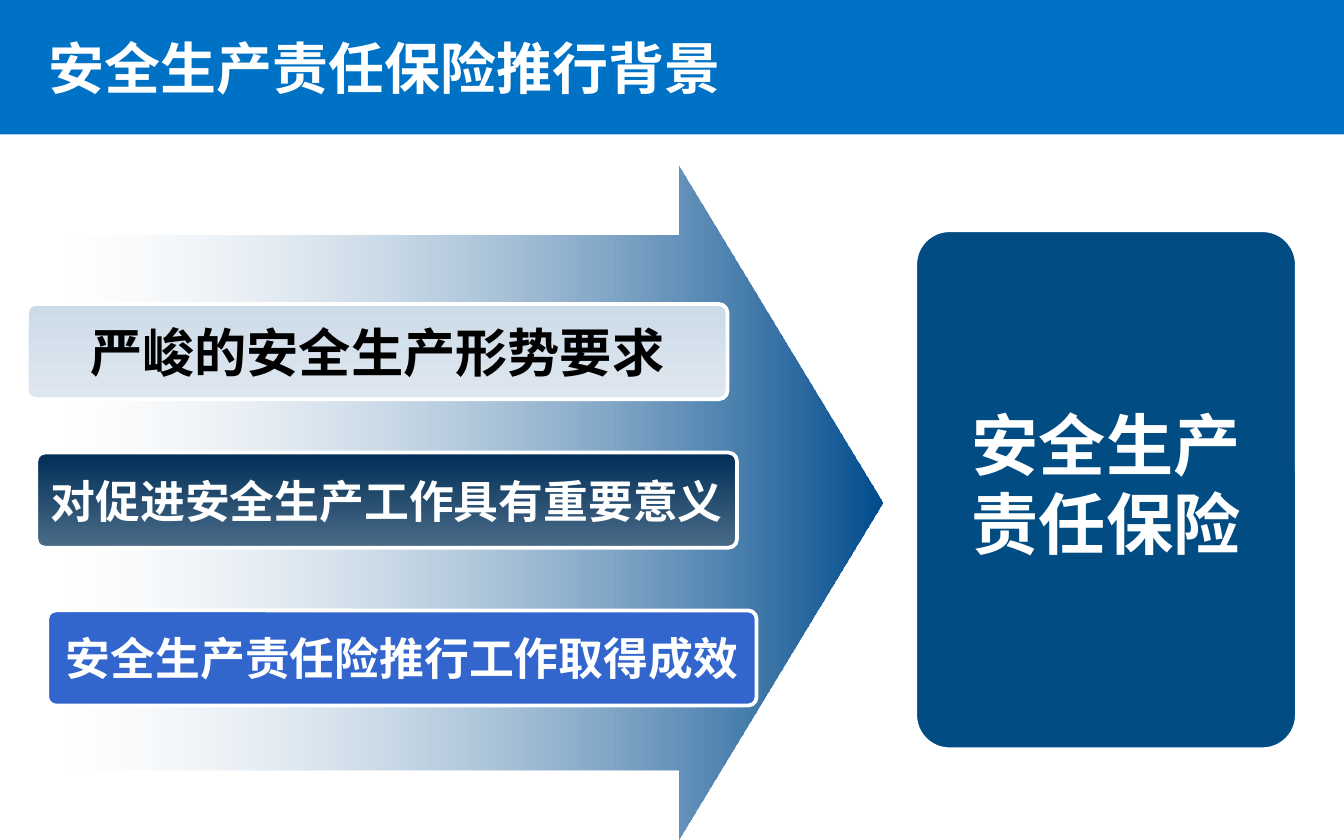
import collections

import pptx
import pptx.dml.color
import pptx.enum.shapes
import pptx.enum.text
import pptx.oxml
import pptx.oxml.ns
import pptx.util

RGBColor = pptx.dml.color.RGBColor
MSO_SHAPE = pptx.enum.shapes.MSO_SHAPE
ANCHOR = pptx.enum.text.MSO_ANCHOR
ALIGN = pptx.enum.text.PP_ALIGN

WHITE = RGBColor(0xFF, 0xFF, 0xFF)
BLACK = RGBColor(0x00, 0x00, 0x00)
HEADER_BLUE = RGBColor(0x00, 0x72, 0xC6)
ARROW_BLUE = RGBColor(0x01, 0x4C, 0x8D)
GOAL_BLUE = RGBColor(0x01, 0x4C, 0x83)
PALE_TOP = RGBColor(0xCD, 0xDB, 0xE8)
PALE_BOTTOM = RGBColor(0xDE, 0xE7, 0xEF)
NAVY_TOP = RGBColor(0x01, 0x2E, 0x57)
NAVY_BOTTOM = RGBColor(0x4A, 0x6C, 0x88)
ROYAL_BLUE = RGBColor(0x33, 0x66, 0xCC)

CJK_FONT = "Noto Sans CJK SC"
CORNER = 0.09
RIGHTWARD, DOWNWARD = 0, 270

Box = collections.namedtuple("Box", "left top width height")

REASONS = [
    ("严峻的安全生产形势要求", 28, BLACK, (PALE_TOP, PALE_BOTTOM), (0, 0, 0.96)),
    ("对促进安全生产工作具有重要意义", 24, WHITE, (NAVY_TOP, NAVY_BOTTOM), (0.013, 0.37, 0.96)),
    ("安全生产责任险推行工作取得成效", 24, WHITE, (ROYAL_BLUE,), (0.028, 0.763, 0.972)),
]


def part(box, left, top, width, height):
    return Box(
        int(box.left + left * box.width),
        int(box.top + top * box.height),
        int(width * box.width),
        int(height * box.height),
    )


def write(holder, text, *, size, color, font="Arial", align=ALIGN.CENTER,
          anchor=ANCHOR.MIDDLE, wrap=True, left=0.1, top=0.05, spacing=None):
    frame = holder.text_frame
    frame.word_wrap = wrap
    frame.auto_size = pptx.enum.text.MSO_AUTO_SIZE.NONE
    frame.vertical_anchor = anchor
    frame.margin_left = pptx.util.Inches(left)
    frame.margin_top = pptx.util.Inches(top)
    paragraph = frame.paragraphs[0]
    paragraph.alignment = align
    if spacing:
        paragraph.line_spacing = pptx.util.Pt(spacing)
    run = paragraph.add_run()
    run.text = text
    run.font.size = pptx.util.Pt(size)
    run.font.bold = True
    run.font.color.rgb = color
    run.font.name = font
    east_asian = pptx.oxml.parse_xml(
        f'<a:ea {pptx.oxml.ns.nsdecls("a")} typeface="{CJK_FONT}"/>')
    run.font._element.find(pptx.oxml.ns.qn("a:latin")).addnext(east_asian)


def paint(shape, colors, angle=DOWNWARD):
    if len(colors) == 1:
        shape.fill.solid()
        shape.fill.fore_color.rgb = colors[0]
        return
    shape.fill.gradient()
    shape.fill.gradient_angle = angle
    for stop, color in zip(shape.fill.gradient_stops, colors):
        stop.color.rgb = color


def add_block(slide, box, kind, colors, adjustments, outlined=True, angle=DOWNWARD):
    block = slide.shapes.add_shape(kind, *box)
    block.shadow.inherit = False
    for index, value in enumerate(adjustments):
        block.adjustments[index] = value
    paint(block, colors, angle)
    if outlined:
        block.line.color.rgb = WHITE
        block.line.width = pptx.util.Pt(2)
    else:
        block.line.fill.background()
    return block


def add_header(slide, box):
    title = slide.shapes.title
    title.left, title.top, title.width, title.height = box
    paint(title, (HEADER_BLUE,))
    write(title, "安全生产责任保险推行背景", size=30, color=WHITE,
          font="Times New Roman", align=ALIGN.LEFT, left=0.36)


def add_arrow(slide, box):
    arrow = add_block(slide, box, MSO_SHAPE.RIGHT_ARROW, (WHITE, ARROW_BLUE),
                      (0.793, 0.303), outlined=False, angle=RIGHTWARD)
    tail_color = next(arrow._element.spPr.iter(pptx.oxml.ns.qn("a:srgbClr")))
    tail_color.append(pptx.oxml.parse_xml(
        f'<a:alpha {pptx.oxml.ns.nsdecls("a")} val="24000"/>'))


def add_reasons(slide, box):
    for text, size, color, fills, (left, top, width) in REASONS:
        bar = add_block(slide, part(box, left, top, width, 0.237),
                        MSO_SHAPE.ROUNDED_RECTANGLE, fills, (CORNER,))
        write(bar, text, size=size, color=color, wrap=False)


def add_goal(slide, box):
    add_block(slide, box, MSO_SHAPE.ROUNDED_RECTANGLE, (GOAL_BLUE,), (CORNER,))
    label = slide.shapes.add_textbox(*part(box, 0.085, 0.306, 0.83, 0.337))
    write(label, "安全生产责任保险", size=36, color=WHITE,
          anchor=ANCHOR.TOP, top=0.12, spacing=42.3)


def main():
    deck = pptx.Presentation()
    deck.slide_width = pptx.util.Inches(10)
    deck.slide_height = pptx.util.Inches(6.25)
    slide = deck.slides.add_slide(deck.slide_layouts.get_by_name("Title Only"))
    page = Box(0, 0, deck.slide_width, deck.slide_height)
    add_header(slide, part(page, 0, 0, 1, 0.16))
    add_arrow(slide, part(page, 0.051, 0.197, 0.606, 0.803))
    add_reasons(slide, part(page, 0.02, 0.362, 0.543, 0.478))
    add_goal(slide, part(page, 0.681, 0.274, 0.284, 0.618))
    deck.save("out.pptx")


if __name__ == "__main__":
    main()
